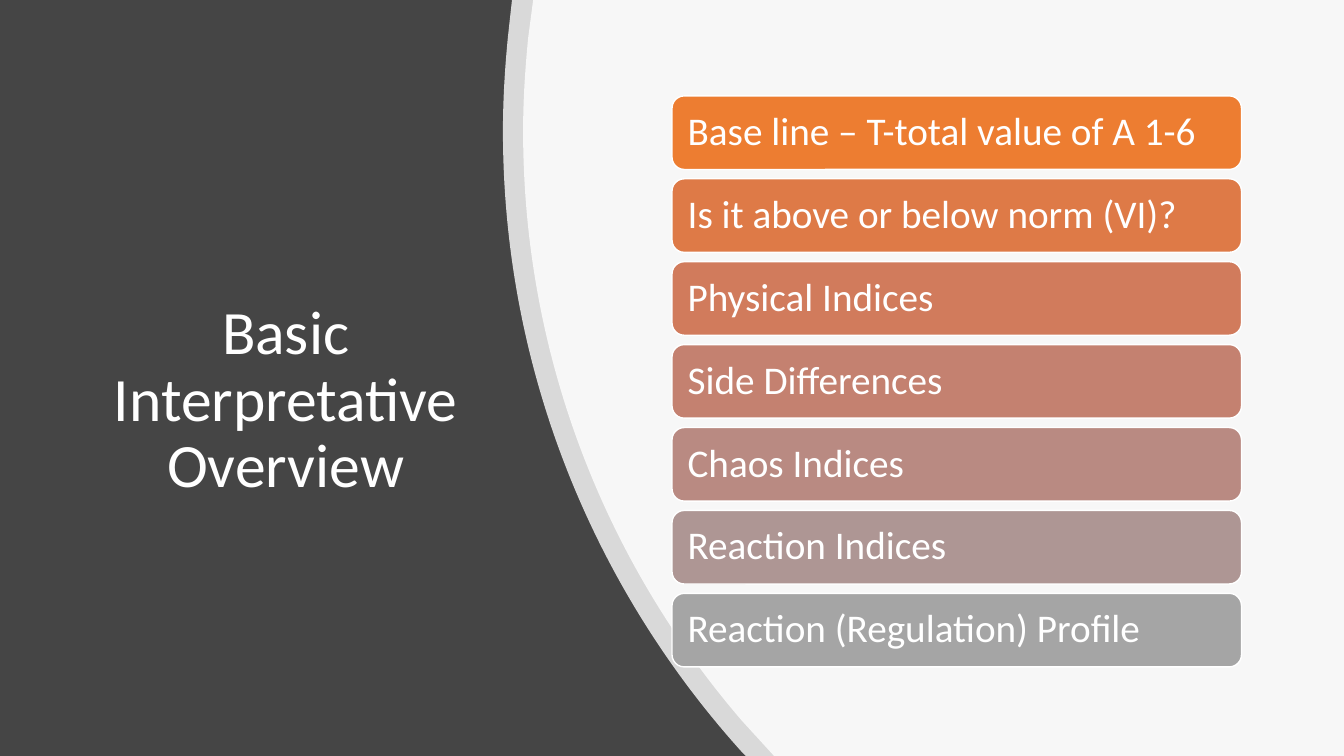
from lxml.etree import SubElement
from pptx import Presentation
from pptx.dml.color import RGBColor
from pptx.enum.shapes import MSO_SHAPE as Shape
from pptx.enum.text import MSO_ANCHOR as Anchor, MSO_AUTO_SIZE as AutoSize, PP_ALIGN as Align
from pptx.oxml.ns import qn
from pptx.util import Inches, Pt

COLUMNS, ROWS = 160, 90
CELL = Inches(13.333) / COLUMNS
FONT = "Calibri"
WHITE = "FFFFFF"

CARD_LEFT, CARD_TOP, CARD_WIDTH, CARD_HEIGHT, CARD_PITCH = 80, 11.42, 67.8, 8.76, 9.87
CARDS = [
    ("Base line – T-total value of A 1-6", "ED7D31"),
    ("Is it above or below norm (VI)?", "DE7A47"),
    ("Physical Indices", "D17B5C"),
    ("Side Differences", "C48170"),
    ("Chaos Indices", "B98A82"),
    ("Reaction Indices", "AE9694"),
    ("Reaction (Regulation) Profile", "A5A5A5"),
]

CORNERS = [(COLUMNS, 0), (COLUMNS, ROWS)]
OUTER_EDGE = (
    [(60.96, 0), *CORNERS, (88.8, ROWS), (88.32, 89.52)],
    [(70.68, 69.96), (59.88, 44.04), (59.88, 15.6),
     (59.88, 11.76), (60.12, 8.04), (60.48, 4.32)],
)
INNER_EDGE = (
    [(63.48, 0), *CORNERS, (92.16, ROWS), (88.32, 85.8)],
    [(72.12, 66.96), (62.28, 42.48), (62.28, 15.6),
     (62.28, 11.88), (62.52, 8.28), (62.88, 4.56)],
)


def cells(count):
    """Return the length of a number of grid cells."""
    return round(count * CELL)


def paint(fill, color):
    """Make a fill solid in a hex colour."""
    fill.solid()
    fill.fore_color.rgb = RGBColor.from_string(color)


def write(frame, words, size, align):
    """Write one white, vertically centred paragraph."""
    frame.word_wrap = True
    frame.auto_size = AutoSize.NONE
    frame.vertical_anchor = Anchor.MIDDLE
    paragraph = frame.paragraphs[0]
    paragraph.alignment = align
    paragraph.line_spacing = 0.9
    run = paragraph.add_run()
    run.text = words
    run.font.name = FONT
    run.font.size = Pt(size)
    paint(run.font.fill, WHITE)


def bend(sweep, straight_count):
    """Turn the segments after the straight ones into cubic curves."""
    segments = list(sweep.element.iter(qn("a:lnTo")))[straight_count:]
    for first in range(0, len(segments), 3):
        curve = segments[first]
        curve.addprevious(curve.makeelement(qn("a:cubicBezTo")))
        bezier = curve.getprevious()
        for segment in segments[first:first + 3]:
            bezier.append(segment[0])
            segment.getparent().remove(segment)


def add_sweep(slide, straight, curved):
    """Add a translucent white panel with a curved left edge."""
    start, *outline = [(cells(x), cells(y)) for x, y in straight + curved]
    builder = slide.shapes.build_freeform(*start)
    builder.add_line_segments(outline, close=False)
    sweep = builder.convert_to_shape()
    bend(sweep, len(straight) - 1)
    for outline_path in sweep.element.iter(qn("a:path")):
        SubElement(outline_path, qn("a:close"))
    sweep.shadow.inherit = False
    sweep.line.fill.background()
    paint(sweep.fill, WHITE)
    for tint in sweep.element.spPr.iter(qn("a:srgbClr")):
        SubElement(tint, qn("a:alpha"), val="80000")


def add_card(slide, row, words, color):
    """Add one rounded card of the list."""
    card = slide.shapes.add_shape(
        Shape.ROUNDED_RECTANGLE, cells(CARD_LEFT), cells(CARD_TOP + row * CARD_PITCH),
        cells(CARD_WIDTH), cells(CARD_HEIGHT))
    card.shadow.inherit = False
    paint(card.fill, color)
    paint(card.line.fill, WHITE)
    card.line.width = Pt(1)
    frame = card.text_frame
    frame.margin_left = frame.margin_right = Inches(0.12)
    write(frame, words, 28, Align.LEFT)


def add_title(slide, words):
    """Place and fill the title."""
    title = slide.shapes.title
    title.left, title.top = cells(10.5), cells(18.36)
    title.width, title.height = cells(47.04), cells(58.8)
    write(title.text_frame, words, 44, Align.CENTER)


def main():
    """Build and save the slide."""
    deck = Presentation()
    deck.slide_width, deck.slide_height = cells(COLUMNS), cells(ROWS)
    slide = deck.slides.add_slide(deck.slide_layouts[5])
    paint(slide.background.fill, "454545")
    add_title(slide, "Basic Interpretative Overview")
    for straight, curved in (OUTER_EDGE, INNER_EDGE):
        add_sweep(slide, straight, curved)
    for row, (words, color) in enumerate(CARDS):
        add_card(slide, row, words, color)
    deck.save("out.pptx")


if __name__ == "__main__":
    main()
